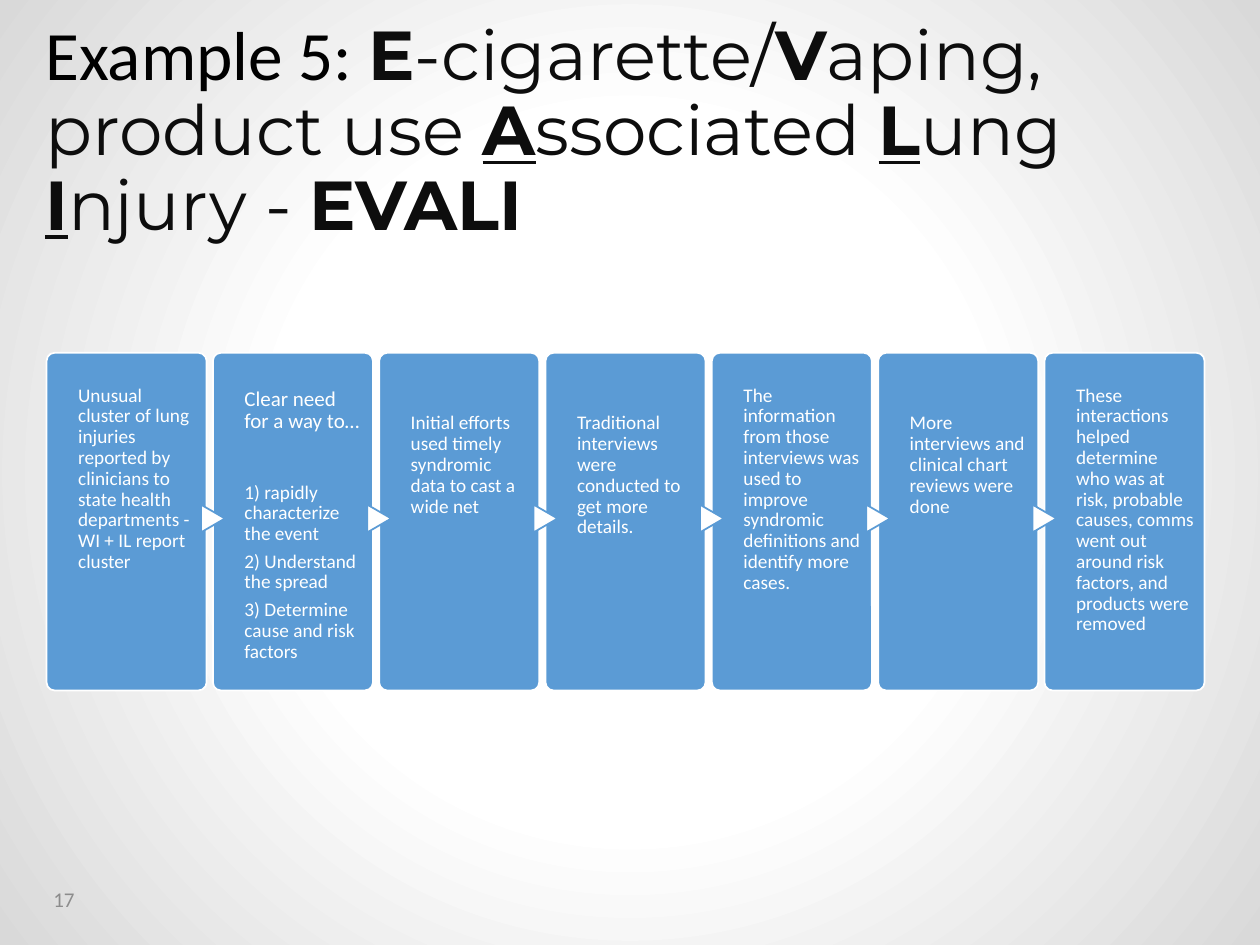
from dataclasses import dataclass

from pptx import Presentation
from pptx.dml.color import RGBColor
from pptx.enum.shapes import MSO_SHAPE
from pptx.enum.text import MSO_ANCHOR, MSO_AUTO_SIZE, PP_ALIGN
from pptx.oxml import parse_xml
from pptx.util import Inches, Pt

ROUND = MSO_SHAPE.ROUNDED_RECTANGLE
ARROW = MSO_SHAPE.FLOWCHART_EXTRACT
MIDDLE = MSO_ANCHOR.MIDDLE
TOP = MSO_ANCHOR.TOP
LEFT = PP_ALIGN.LEFT
RIGHT = PP_ALIGN.RIGHT
FIXED = MSO_AUTO_SIZE.NONE

WHITE, BLUE, BLACK, INK, GRAY = "FFFFFF", "5B9BD5", "000000", "0D0D0D", "8C8C8C"
BODY, HEAD = "Calibri", "Montserrat"
WIDE, HIGH = 10, 7.5
START, PITCH, CARD = 0.37, 1.32, 1.27
ROW, TALL = 2.8, 2.68
GAP = 3.85

BACK = """<p:bg xmlns:p="http://schemas.openxmlformats.org/presentationml/2006/main"
 xmlns:a="http://schemas.openxmlformats.org/drawingml/2006/main"><p:bgPr>
<a:gradFill rotWithShape="1"><a:gsLst>
<a:gs pos="0"><a:srgbClr val="FFFFFF"/></a:gs>
<a:gs pos="45000"><a:srgbClr val="FFFFFF"/></a:gs>
<a:gs pos="100000"><a:srgbClr val="D9D9D9"/></a:gs></a:gsLst>
<a:path path="circle"><a:fillToRect l="50000" t="50000" r="50000" b="50000"/></a:path>
</a:gradFill><a:effectLst/></p:bgPr></p:bg>"""


@dataclass
class Line:
    text: str
    size: float = 11
    after: float = GAP


@dataclass
class Step:
    lines: list[Line]
    drop: float = 0.26


@dataclass
class Part:
    text: str
    bold: bool = False
    under: bool = False
    font: str = HEAD
    tint: str = INK


STEPS = [
    Step([Line("Unusual cluster of lung injuries reported by clinicians to state "
               "health departments - WI + IL report cluster")]),
    Step([Line("Clear need for a way to…", 12, 28),
          Line("1) rapidly characterize the event"),
          Line("2) Understand the spread"),
          Line("3) Determine cause and risk factors")], 0.28),
    Step([Line("Initial efforts used timely syndromic data to cast a wide net")], 0.48),
    Step([Line("Traditional interviews were conducted to get more details.")], 0.48),
    Step([Line("The information from those interviews was used to improve syndromic "
               "definitions and identify more cases.")]),
    Step([Line("More interviews and clinical chart reviews were done")], 0.48),
    Step([Line("These interactions helped determine who was at risk, probable causes, "
               "comms went out around risk factors, and products were removed")]),
]

TITLE = [
    Part("Example 5: ", font=BODY, tint=BLACK),
    Part("E", True), Part("-cigarette/"),
    Part("V", True), Part("aping, product use "),
    Part("A", True, True), Part("ssociated "),
    Part("L", True, True), Part("ung "),
    Part("I", True, True), Part("njury - "),
    Part("EVALI", True),
]


def color(code: str) -> RGBColor:
    return RGBColor.from_string(code)


def style(font, name: str, size: float, tint: str) -> None:
    font.name = name
    font.size = Pt(size)
    font.color.rgb = color(tint)


def block(slide, kind, box: tuple, fill: str, edge: str):
    shape = slide.shapes.add_shape(kind, *map(Inches, box))
    shape.shadow.inherit = False
    shape.fill.solid()
    shape.fill.fore_color.rgb = color(fill)
    shape.line.color.rgb = color(edge)
    shape.line.width = Pt(1)
    return shape


def write(slide, box: tuple, lines: list[Line], tint: str, align, anchor):
    frame = slide.shapes.add_textbox(*map(Inches, box)).text_frame
    frame.word_wrap = True
    frame.vertical_anchor = anchor
    frame.text = "\n".join(line.text for line in lines)
    for para, line in zip(frame.paragraphs, lines):
        para.alignment = align
        para.line_spacing = 0.9
        para.space_after = Pt(line.after)
        style(para.runs[0].font, BODY, line.size, tint)
    return frame


def draw_step(slide, col: int, step: Step) -> None:
    left = START + col * PITCH
    card = block(slide, ROUND, (left, ROW, CARD, TALL), BLUE, WHITE)
    card.adjustments[0] = 0.05
    if col:
        mid = ROW + TALL / 2
        arrow = block(slide, ARROW, (left - 0.11, mid - 0.12, 0.22, 0.19), WHITE, BLUE)
        arrow.rotation = 90
    frame = write(slide, (left + 0.25, ROW, 0.95, TALL), step.lines, WHITE, LEFT, TOP)
    frame.margin_left = frame.margin_right = frame.margin_bottom = 0
    frame.margin_top = Inches(step.drop)


def draw_title(shape) -> None:
    shape.left, shape.top, shape.width, shape.height = map(
        Inches, (0.26, 0.33, 9.06, 1.45))
    frame = shape.text_frame
    frame.word_wrap = True
    frame.auto_size = FIXED
    frame.vertical_anchor = MIDDLE
    para = frame.paragraphs[0]
    para.alignment = LEFT
    para.line_spacing = 0.9
    for part in TITLE:
        run = para.add_run()
        run.text = part.text
        style(run.font, part.font, 39.6, part.tint)
        run.font.bold = part.bold
        run.font.underline = part.under


def main() -> None:
    deck = Presentation()
    deck.slide_width, deck.slide_height = Inches(WIDE), Inches(HIGH)
    slide = deck.slides.add_slide(deck.slide_layouts[5])
    slide.element.cSld.insert(0, parse_xml(BACK))
    draw_title(slide.shapes.title)
    write(slide, (0, 6.95, 0.69, 0.4), [Line("17", 12, 0)], GRAY, RIGHT, MIDDLE)
    for col, step in enumerate(STEPS):
        draw_step(slide, col, step)
    deck.save("out.pptx")


if __name__ == "__main__":
    main()
